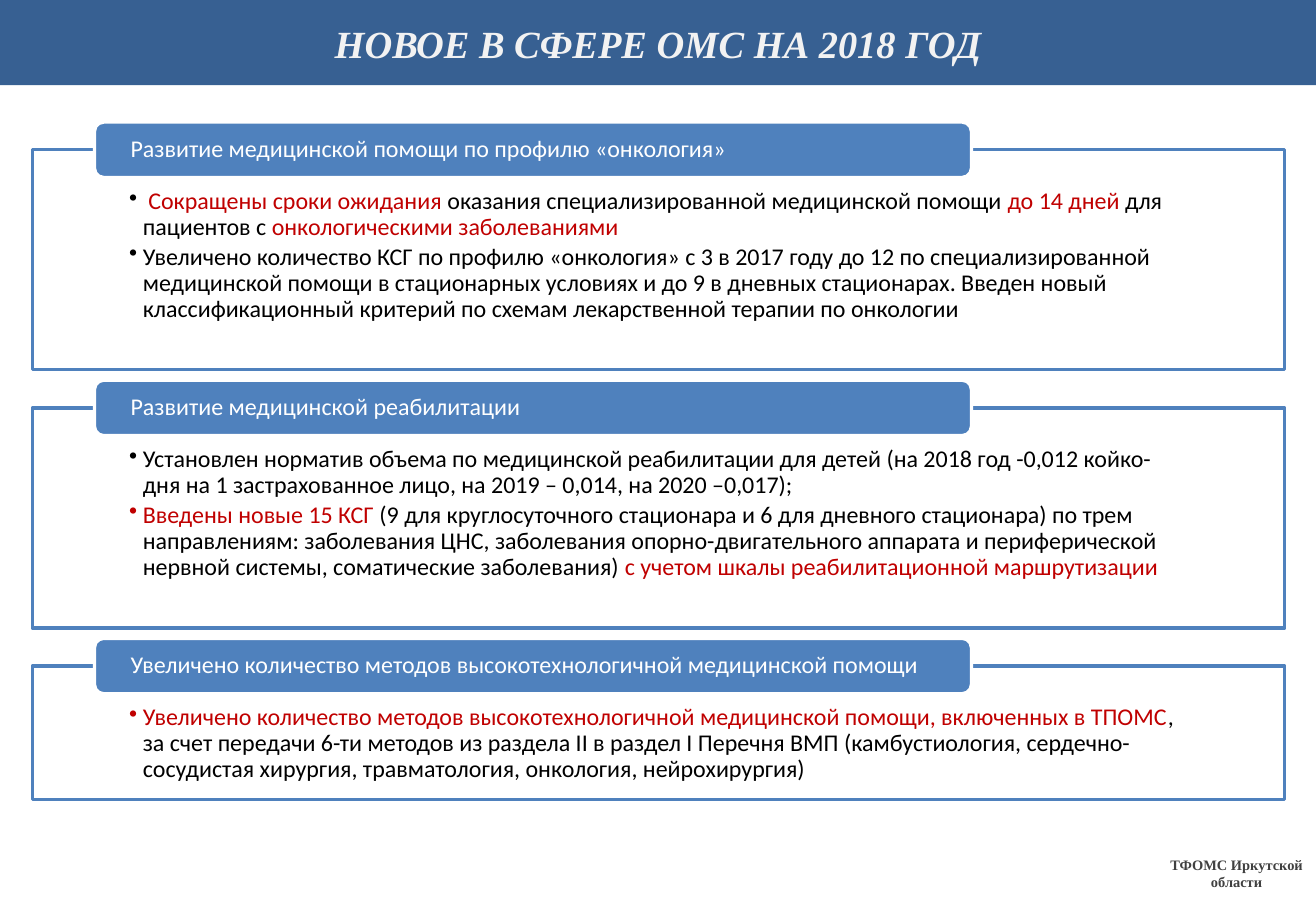
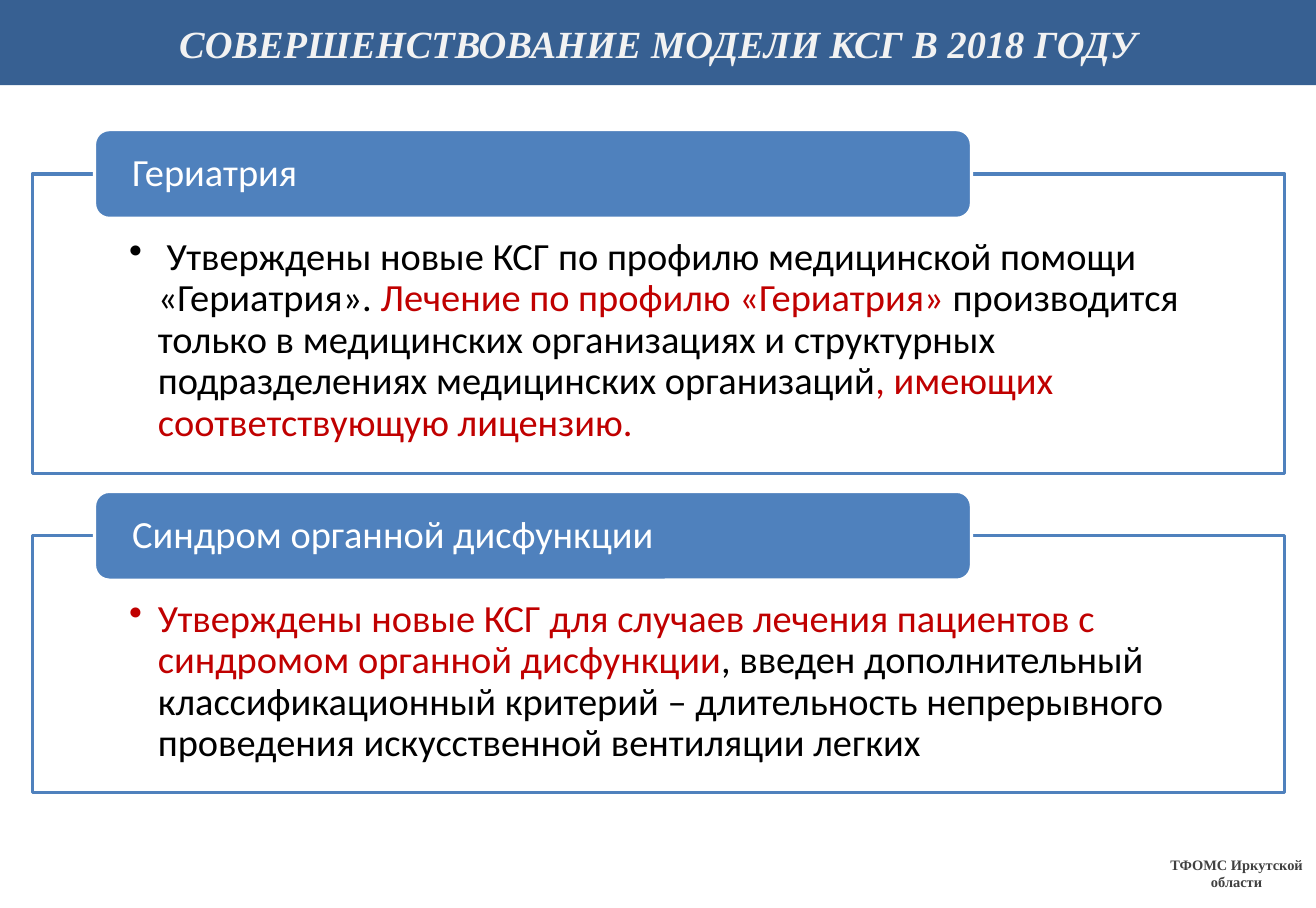
from dataclasses import dataclass

from lxml import etree
from pptx import Presentation
from pptx.dml.color import RGBColor
from pptx.enum.shapes import MSO_SHAPE
from pptx.enum.text import MSO_ANCHOR, MSO_AUTO_SIZE, PP_ALIGN
from pptx.oxml.ns import qn
from pptx.util import Inches, Pt

RECTANGLE = MSO_SHAPE.RECTANGLE
ROUNDED_RECTANGLE = MSO_SHAPE.ROUNDED_RECTANGLE
TOP = MSO_ANCHOR.TOP
MIDDLE = MSO_ANCHOR.MIDDLE
LEFT = PP_ALIGN.LEFT
CENTER = PP_ALIGN.CENTER
NO_AUTOFIT = MSO_AUTO_SIZE.NONE


@dataclass(frozen=True)
class Theme:
    band: RGBColor = RGBColor.from_string("376092")
    title: RGBColor = RGBColor.from_string("F2F2F2")
    footer: RGBColor = RGBColor.from_string("404040")
    panel: RGBColor = RGBColor.from_string("4F81BD")
    white: RGBColor = RGBColor.from_string("FFFFFF")
    text: RGBColor = RGBColor.from_string("000000")
    accent: RGBColor = RGBColor.from_string("C00000")
    serif: str = "Times New Roman"
    sans: str = "Calibri"
    title_size: int = 24
    footer_size: int = 9
    small_size: int = 15
    large_size: int = 24
    line_width: int = 2


theme = Theme()
SLIDE_WIDTH = 11.42
SLIDE_HEIGHT = 7.88
FOOTER_TEXT = "ТФОМС Иркутской области"

SLIDES = [
    {
        "title": "НОВОЕ В СФЕРЕ ОМС НА 2018 ГОД",
        "size": theme.small_size,
        "top": 1.3,
        "gap": 0.33,
        "heading_height": 0.48,
        "insets": (0.34, 0.12),
        "indent": 0.12,
        "sections": [
            ("Развитие медицинской помощи по профилю «онкология»", 1.91, [
                [
                    (" ", theme.text),
                    ("Сокращены сроки ожидания ", theme.accent),
                    ("оказания специализированной медицинской помощи ", theme.text),
                    ("до 14 дней", theme.accent),
                    (" для пациентов с ", theme.text),
                    ("онкологическими заболеваниями", theme.accent),
                ],
                [
                    ("Увеличено количество КСГ по профилю «онкология» с 3 в 2017 году "
                     "до 12 по специализированной медицинской помощи в стационарных "
                     "условиях и до 9 в дневных стационарах. Введен новый "
                     "классификационный критерий по схемам лекарственной терапии "
                     "по онкологии", theme.text),
                ],
            ]),
            ("Развитие медицинской реабилитации", 1.91, [
                [
                    ("Установлен норматив объема по медицинской реабилитации для детей "
                     "(на 2018 год -0,012 койко-дня на 1 застрахованное лицо, "
                     "на 2019 – 0,014, на 2020 –0,017);", theme.text),
                ],
                [
                    ("Введены новые 15 КСГ ", theme.accent),
                    ("(9 для круглосуточного стационара и 6 для дневного стационара) "
                     "по трем направлениям: заболевания ЦНС, заболевания "
                     "опорно-двигательного аппарата и периферической нервной системы, "
                     "соматические заболевания) ", theme.text),
                    ("с учетом шкалы реабилитационной маршрутизации", theme.accent),
                ],
            ]),
            ("Увеличено количество методов высокотехнологичной медицинской помощи", 1.16, [
                [
                    ("Увеличено количество методов высокотехнологичной медицинской "
                     "помощи, включенных в ТПОМС", theme.accent),
                    (", за счет передачи 6-ти методов из раздела II в раздел I Перечня "
                     "ВМП (камбустиология, сердечно-сосудистая хирургия, "
                     "травматология, онкология, нейрохирургия)", theme.text),
                ],
            ]),
        ],
    },
    {
        "title": "СОВЕРШЕНСТВОВАНИЕ МОДЕЛИ КСГ В 2018 ГОДУ",
        "size": theme.large_size,
        "top": 1.51,
        "gap": 0.54,
        "heading_height": 0.77,
        "insets": (0.55, 0.19),
        "indent": 0.25,
        "sections": [
            ("Гериатрия", 2.6, [
                [
                    (" Утверждены новые КСГ по профилю медицинской помощи "
                     "«Гериатрия». ", theme.text),
                    ("Лечение по профилю «Гериатрия» ", theme.accent),
                    ("производится только в медицинских организациях и структурных "
                     "подразделениях медицинских организаций", theme.text),
                    (", имеющих соответствующую лицензию.", theme.accent),
                ],
            ]),
            ("Синдром органной дисфункции", 2.23, [
                [
                    ("Утверждены новые КСГ для случаев лечения пациентов с синдромом "
                     "органной дисфункции", theme.accent),
                    (", введен дополнительный классификационный критерий – "
                     "длительность непрерывного проведения искусственной вентиляции "
                     "легких", theme.text),
                ],
            ]),
        ],
    },
]


def style_font(font, name, size, color, bold=False, italic=False):
    font.name = name
    font.size = Pt(size)
    font.color.rgb = color
    font.bold = bold
    font.italic = italic


def add_box(slide, kind, box, fill, line, anchor, insets):
    shape = slide.shapes.add_shape(kind, *[Inches(length) for length in box])
    shape.shadow.inherit = False
    shape.fill.solid()
    shape.fill.fore_color.rgb = fill
    shape.line.color.rgb = line
    shape.line.width = Pt(theme.line_width)
    text_frame = shape.text_frame
    text_frame.word_wrap = True
    text_frame.vertical_anchor = anchor
    side, top, bottom = insets
    text_frame.margin_left = text_frame.margin_right = Inches(side)
    text_frame.margin_top = Inches(top)
    text_frame.margin_bottom = Inches(bottom)
    return text_frame


presentation = Presentation()
presentation.slide_width = Inches(SLIDE_WIDTH)
presentation.slide_height = Inches(SLIDE_HEIGHT)
layout = presentation.slide_layouts[5]
slides = [presentation.slides.add_slide(layout) for _ in SLIDES]

footer = slides[0].shapes.add_textbox(Inches(10.04), Inches(7.38), Inches(1.38), Inches(0.4))
footer.text_frame.word_wrap = True
footer.text_frame.text = FOOTER_TEXT
paragraph = footer.text_frame.paragraphs[0]
paragraph.alignment = CENTER
style_font(paragraph.runs[0].font, theme.serif, theme.footer_size, theme.footer, bold=True)
layout.shapes.element.append(footer.element)

for slide, content in zip(slides, SLIDES):
    title = slide.shapes.title
    title.left, title.top = Inches(0), Inches(0)
    title.width, title.height = Inches(SLIDE_WIDTH), Inches(0.74)
    title.fill.solid()
    title.fill.fore_color.rgb = theme.band
    title.text_frame.text = content["title"]
    title.text_frame.auto_size = NO_AUTOFIT
    title.text_frame.vertical_anchor = MIDDLE
    paragraph = title.text_frame.paragraphs[0]
    paragraph.alignment = CENTER
    style_font(paragraph.runs[0].font, theme.serif, theme.title_size, theme.title, True, True)

    size = content["size"]
    heading_height = content["heading_height"]
    top = content["top"]
    for heading, height, bullets in content["sections"]:
        panel_text = add_box(slide, RECTANGLE, (0.28, top, 10.87, height),
                             theme.white, theme.panel, TOP, (0.84, *content["insets"]))
        for index, runs in enumerate(bullets):
            paragraph = panel_text.add_paragraph() if index else panel_text.paragraphs[0]
            paragraph.alignment = LEFT
            paragraph.line_spacing = 0.9
            paragraph.space_after = Pt(size * 0.15)
            properties = paragraph._p.get_or_add_pPr()
            properties.set("marL", str(Inches(content["indent"])))
            properties.set("indent", str(-Inches(content["indent"])))
            etree.SubElement(properties, qn("a:buChar")).set("char", "•")
            for text, color in runs:
                run = paragraph.add_run()
                run.text = text
                style_font(run.font, theme.sans, size, color)

        heading_text = add_box(slide, ROUNDED_RECTANGLE,
                               (0.82, top - heading_height / 2, 7.61, heading_height),
                               theme.panel, theme.white, MIDDLE, (0.29, 0, 0))
        heading_text.text = heading
        paragraph = heading_text.paragraphs[0]
        paragraph.alignment = LEFT
        paragraph.line_spacing = 0.9
        style_font(paragraph.runs[0].font, theme.sans, size, theme.white)
        top += height + content["gap"]

presentation.save("out.pptx")
